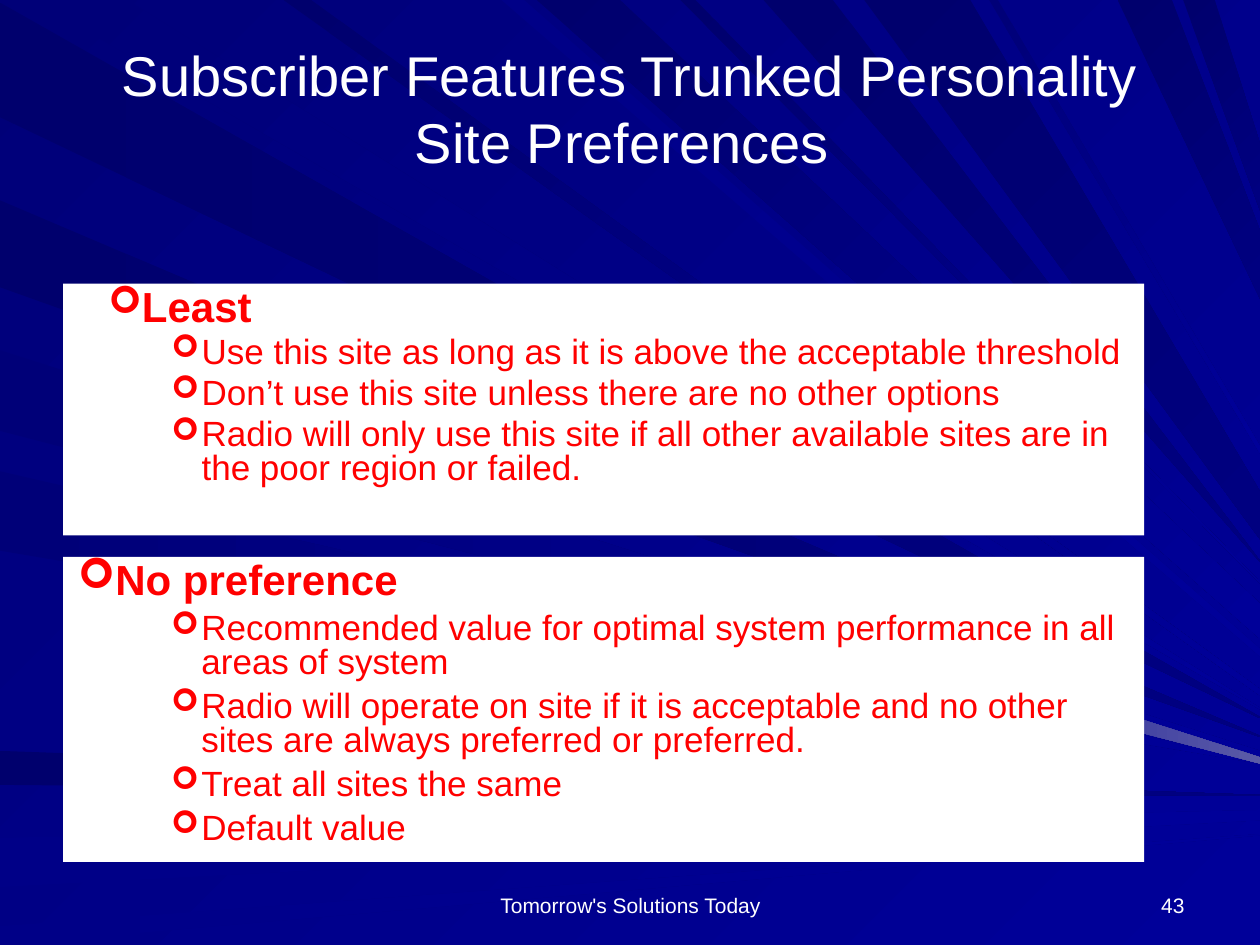
import pptx
import pptx.dml.color
import pptx.enum.shapes
import pptx.enum.text
import pptx.oxml.ns
import pptx.util
from lxml import etree
from pptx.util import Inches

RGBColor = pptx.dml.color.RGBColor
Align = pptx.enum.text.PP_ALIGN
Anchor = pptx.enum.text.MSO_ANCHOR

WHITE = RGBColor.from_string("FFFFFF")
RED = RGBColor.from_string("FF0000")
DEEP = RGBColor.from_string("00006D")
MIDDLE = RGBColor.from_string("000078")
NAVY = RGBColor.from_string("000080")
SOFT = RGBColor.from_string("000087")
BLUE = RGBColor.from_string("000099")
GLOW = RGBColor.from_string("5A5AA6")
FONT = "Arial"
SLIDE_WIDTH = 10
SLIDE_HEIGHT = 7.5

# Rays from the left edge to the right edge: colours, then top and bottom at each edge
LEFT_RAYS = [
    (DEEP, NAVY, 0.02, 0.93, 5.69, 5.7),
    (DEEP, NAVY, 5.96, 6.23, 6.31, 6.32),
    (SOFT, BLUE, 6.65, 7.04, 6.43, 6.51),
    (SOFT, BLUE, 7.35, 7.5, 6.62, 6.63),
    (DEEP, NAVY, 1.59, 2.28, 5.84, 5.85),
    (MIDDLE, BLUE, 2.78, 3.42, 5.96, 6.02),
    (MIDDLE, BLUE, 3.74, 4.37, 6.05, 6.06),
]
# Rays from the top edge to the right edge: colours, left and right, then top and bottom
TOP_RAYS = [
    (MIDDLE, BLUE, 0.26, 1.01, 5.62, 5.63),
    (SOFT, BLUE, 3.98, 4.16, 5.15, 5.21),
    (DEEP, BLUE, 4.26, 4.92, 4.79, 5.07),
    (DEEP, BLUE, 5.4, 5.52, 4.62, 4.63),
    (DEEP, NAVY, 6.06, 6.61, 4.45, 4.46),
    (DEEP, NAVY, 8.87, 9.3, 1.83, 2.37),
    (DEEP, NAVY, 9.39, 9.64, 1.14, 1.67),
    (DEEP, BLUE, 2.25, 2.47, 5.47, 5.52),
    (DEEP, NAVY, 6.86, 7.7, 3.9, 4.28),
    (MIDDLE, BLUE, 7.85, 7.92, 3.54, 3.6),
]
GLOW_RAY = [(6.37, 4.85), (6.33, 5.11), (10, 6.06), (10, 6.01)]

# Heading first, then its points
LEAST = [
    "Least",
    "Use this site as long as it is above the acceptable threshold",
    "Don’t use this site unless there are no other options",
    "Radio will only use this site if all other available sites are in the poor region or failed.",
]
NO_PREFERENCE = [
    "No preference",
    "Recommended value for optimal system performance in all areas of system",
    "Radio will operate on site if it is acceptable and no other sites are always preferred or preferred.",
    "Treat all sites the same",
    "Default value",
]


def fill_gradient(fill, start, end, angle):
    """Blend two colours; the angle runs clockwise."""
    fill.gradient()
    fill.gradient_angle = -angle % 360
    for stop, color in zip(fill.gradient_stops, (start, end)):
        stop.color.rgb = color


def add_ray(slide, start, end, angle, corners):
    points = [(Inches(x), Inches(y)) for x, y in corners]
    builder = slide.shapes.build_freeform(*points[0], scale=1.0)
    builder.add_line_segments(points[1:], close=True)
    ray = builder.convert_to_shape()
    ray.shadow.inherit = False
    ray.line.fill.background()
    fill_gradient(ray.fill, start, end, angle)


def add_backdrop(slide):
    fill_gradient(slide.background.fill, MIDDLE, BLUE, 45)
    for start, end, top, bottom, end_top, end_bottom in LEFT_RAYS:
        corners = [(0, top), (0, bottom), (SLIDE_WIDTH, end_bottom), (SLIDE_WIDTH, end_top)]
        add_ray(slide, start, end, 0, corners)
    for start, end, left, right, end_top, end_bottom in TOP_RAYS:
        corners = [(left, 0), (right, 0), (SLIDE_WIDTH, end_top), (SLIDE_WIDTH, end_bottom)]
        add_ray(slide, start, end, 45, corners)
    add_ray(slide, BLUE, GLOW, 0, GLOW_RAY)


def place(shape, left, top, width, height):
    shape.left, shape.top = Inches(left), Inches(top)
    shape.width, shape.height = Inches(width), Inches(height)


def format_runs(para, size, color, bold=False):
    for run in para.runs:
        run.font.name = FONT
        run.font.size = pptx.util.Pt(size)
        run.font.color.rgb = color
        run.font.bold = bold


def set_bullet(para, margin, indent, percent):
    qn = pptx.oxml.ns.qn
    props = para._p.get_or_add_pPr()
    props.set("marL", str(Inches(margin)))
    props.set("indent", str(Inches(indent)))
    color = etree.SubElement(props, qn("a:buClr"))
    etree.SubElement(color, qn("a:srgbClr"), val=str(RED))
    etree.SubElement(props, qn("a:buSzPct"), val=str(percent * 1000))
    etree.SubElement(props, qn("a:buFont"), typeface="Wingdings")
    etree.SubElement(props, qn("a:buChar"), char="➢")


def fill_panel(panel, lines, heading_indent, heading_percent, gap):
    """Write a bold heading and its points on a white panel."""
    panel.fill.solid()
    panel.fill.fore_color.rgb = WHITE
    panel.line.fill.background()
    frame = panel.text_frame
    frame.word_wrap = True
    frame.auto_size = pptx.enum.text.MSO_AUTO_SIZE.NONE
    frame.vertical_anchor = Anchor.TOP
    frame.text = "\n".join(lines)
    for number, para in enumerate(frame.paragraphs):
        heading = number == 0
        para.level = 1 if heading else 2
        if heading:
            set_bullet(para, 0.26, heading_indent, heading_percent)
        else:
            set_bullet(para, 1, -0.24, 90)
        para.alignment = Align.LEFT
        para.line_spacing = 0.8
        para.space_before = pptx.util.Pt(0 if heading else gap)
        format_runs(para, 24 if heading else 20, RED, bold=heading)


def add_title(slide, text):
    title = slide.shapes.title
    place(title, 0.25, 0.3, 9.5, 1.11)
    frame = title.text_frame
    frame.text = text
    frame.auto_size = pptx.enum.text.MSO_AUTO_SIZE.NONE
    frame.vertical_anchor = Anchor.MIDDLE
    frame.paragraphs[0].alignment = Align.CENTER
    format_runs(frame.paragraphs[0], 32, WHITE)


def add_footer(slide, text, left, width, alignment):
    box = slide.shapes.add_textbox(Inches(left), Inches(6.83), Inches(width), Inches(0.5))
    frame = box.text_frame
    frame.word_wrap = True
    frame.vertical_anchor = Anchor.BOTTOM
    frame.text = text
    frame.paragraphs[0].alignment = alignment
    format_runs(frame.paragraphs[0], 12, WHITE)


def main():
    deck = pptx.Presentation()
    deck.slide_width, deck.slide_height = Inches(SLIDE_WIDTH), Inches(SLIDE_HEIGHT)
    slide = deck.slides.add_slide(deck.slide_layouts[1])
    title, body = slide.shapes.title, slide.placeholders[1]

    add_backdrop(slide)
    # Bring the placeholders in front of the rays
    for holder in (title, body):
        slide.shapes._spTree.append(holder._element)

    add_title(slide, "Subscriber Features Trunked Personality\vSite Preferences ")
    place(body, 0.5, 2.25, 8.58, 2)
    fill_panel(body, LEAST, 0, 90, 4.3)
    panel = slide.shapes.add_shape(pptx.enum.shapes.MSO_SHAPE.RECTANGLE, 0, 0, 0, 0)
    place(panel, 0.5, 4.42, 8.58, 2.42)
    panel.shadow.inherit = False
    fill_panel(panel, NO_PREFERENCE, -0.24, 100, 6)
    add_footer(slide, "43", 7.17, 2.33, Align.RIGHT)
    add_footer(slide, "Tomorrow's Solutions Today", 3.42, 3.17, Align.CENTER)
    deck.save("out.pptx")


if __name__ == "__main__":
    main()
